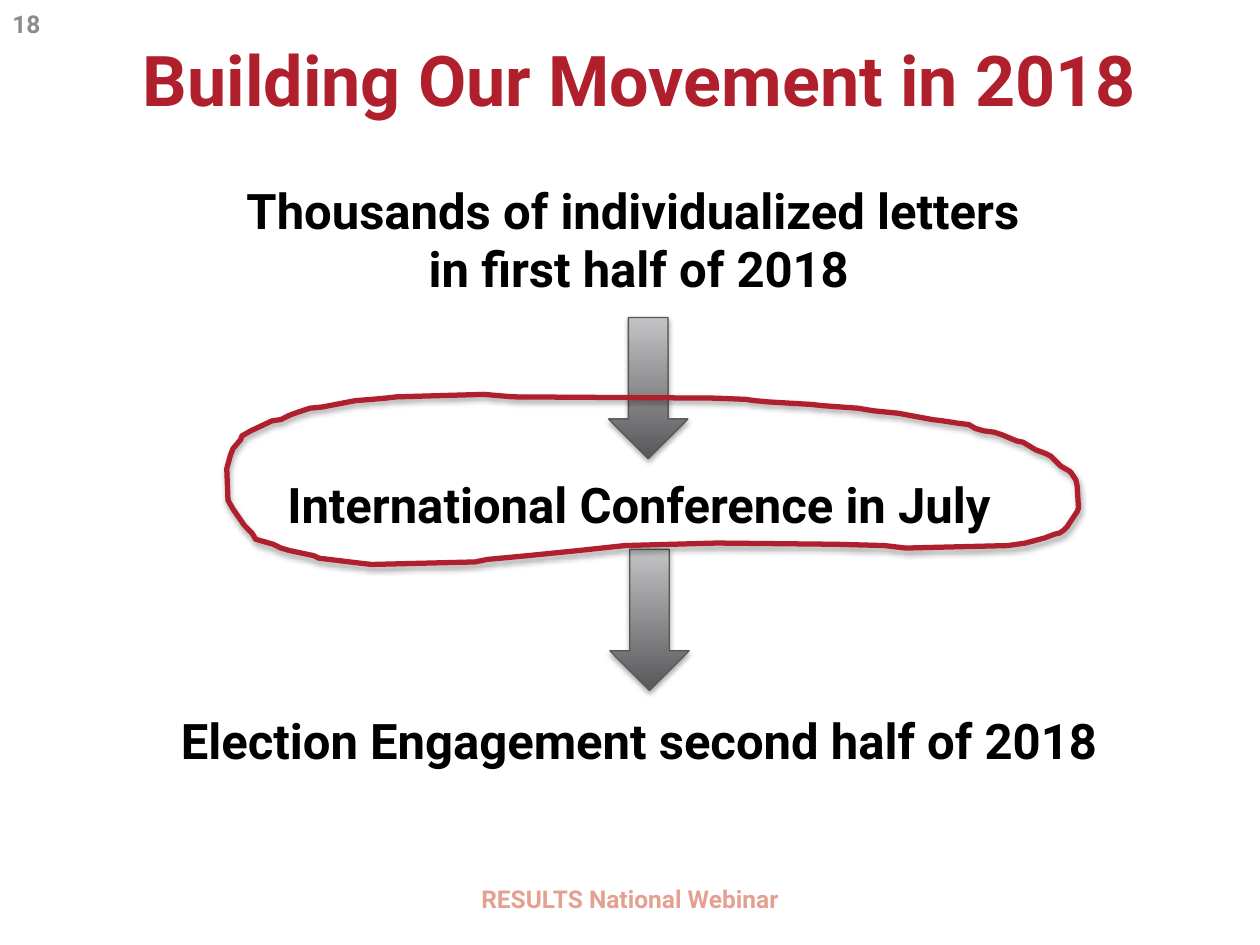
from dataclasses import dataclass

from lxml import etree
from pptx import Presentation
from pptx.dml.color import RGBColor
from pptx.enum import shapes, text
from pptx.oxml import ns
from pptx.util import Pt

PX = 9144  # 100 px to the inch


@dataclass(frozen=True)
class Theme:
    face: str = "Roboto"
    red: str = "AF1F2C"
    pink: str = "E3A192"
    gray: str = "8C8C8C"
    ink: str = "000000"
    dark: str = "58585B"
    light: str = "C3C3C5"
    edge: str = "565659"
    small: int = 14
    body: int = 28
    title: int = 40


T = Theme()
MID, TOP = text.MSO_ANCHOR.MIDDLE, text.MSO_ANCHOR.TOP
LEFT, CENTER = text.PP_ALIGN.LEFT, text.PP_ALIGN.CENTER
GAP = 101  # points between steps: three body lines

# Content: box, lines as (text, space before), size, colour, align, anchor
TEXTS = [
    ((0, -1, 50, 40), [("18", 0)], T.small, T.gray, LEFT, MID),
    ((0, 696, 1000, 34), [("RESULTS National Webinar", 0)],
     T.small, T.pink, CENTER, MID),
    ((65, 24, 885, 77), [("Building Our Movement in 2018", 0)],
     T.title, T.red, CENTER, TOP),
    ((83, 138, 848, 481), [
        ("Thousands of individualized letters ", 0),
        ("in first half of 2018", 0),
        ("International Conference in July", GAP),
        ("Election Engagement second half of 2018", GAP),
    ], T.body, T.ink, CENTER, TOP),
]
ARROWS = [(483, 252, 63, 112), (484, 436, 63, 112)]

# Hand-drawn loop around the conference
LOOP = [
    (849, 374), (842, 370), (834, 362), (830, 360), (822, 357), (812, 351),
    (807, 350), (795, 345), (789, 343), (781, 342), (774, 340), (769, 337),
    (761, 336), (748, 334), (740, 333), (713, 328), (693, 326), (681, 324),
    (653, 322), (644, 321), (610, 319), (599, 318), (592, 317), (568, 316),
    (407, 315), (384, 313), (315, 315), (306, 316), (295, 317), (282, 318),
    (256, 323), (246, 324), (234, 328), (229, 330), (223, 333), (216, 334),
    (199, 342), (192, 346), (191, 349), (185, 356), (183, 361), (180, 372),
    (181, 397), (185, 404), (194, 417), (200, 423), (203, 428), (217, 432),
    (223, 435), (230, 437), (249, 441), (253, 443), (286, 447), (295, 448),
    (377, 446), (387, 444), (419, 441), (459, 437), (496, 433), (569, 431),
    (664, 432), (702, 433), (719, 435), (800, 433), (814, 431), (829, 427),
    (837, 424), (841, 423), (844, 421), (847, 418), (855, 406), (856, 403),
    (855, 386), (854, 381), (850, 375),
]


def rgb(code):
    return RGBColor.from_string(code)


def emu(box):
    return [n * PX for n in box]


def write(slide, box, lines, size, color, align, anchor):
    frame = slide.shapes.add_textbox(*emu(box)).text_frame
    frame.word_wrap = True
    frame.vertical_anchor = anchor
    for i, (words, gap) in enumerate(lines):
        para = frame.paragraphs[0] if i == 0 else frame.add_paragraph()
        para.text = words
        para.alignment = align
        para.space_before = Pt(gap)
        font = para.font
        font.name, font.size, font.bold = T.face, Pt(size), True
        font.color.rgb = rgb(color)


def outline(shape, color, width):
    shape.line.color.rgb = rgb(color)
    shape.line.width = Pt(width)


def shade(shape):
    """Soft shadow straight below the shape."""
    shape.shadow.inherit = False
    effects = shape._element.spPr.find(ns.qn("a:effectLst"))
    outer = etree.SubElement(effects, ns.qn("a:outerShdw"), blurRad="40000",
                             dist="23000", dir="5400000", rotWithShape="0")
    color = etree.SubElement(outer, ns.qn("a:srgbClr"), val=T.ink)
    etree.SubElement(color, ns.qn("a:alpha"), val="35000")


def arrow(slide, box):
    shape = slide.shapes.add_shape(shapes.MSO_SHAPE.DOWN_ARROW, *emu(box))
    shape.fill.gradient()
    shape.fill.gradient_angle = 90
    for stop, color, place in zip(shape.fill.gradient_stops,
                                  (T.dark, T.light), (0, 1)):
        stop.color.rgb = rgb(color)
        stop.position = place
    outline(shape, T.edge, 0.75)
    shade(shape)


def loop(slide, points):
    pen = slide.shapes.build_freeform(*points[0], scale=PX)
    pen.add_line_segments(points[1:], close=True)
    shape = pen.convert_to_shape()
    shape.fill.background()
    outline(shape, T.red, 3)
    shade(shape)


def main():
    deck = Presentation()
    deck.slide_width, deck.slide_height = 1000 * PX, 750 * PX
    slide = deck.slides.add_slide(deck.slide_layouts[6])
    for item in TEXTS:
        write(slide, *item)
    for box in ARROWS:
        arrow(slide, box)
    loop(slide, LOOP)
    deck.save("out.pptx")


if __name__ == "__main__":
    main()
